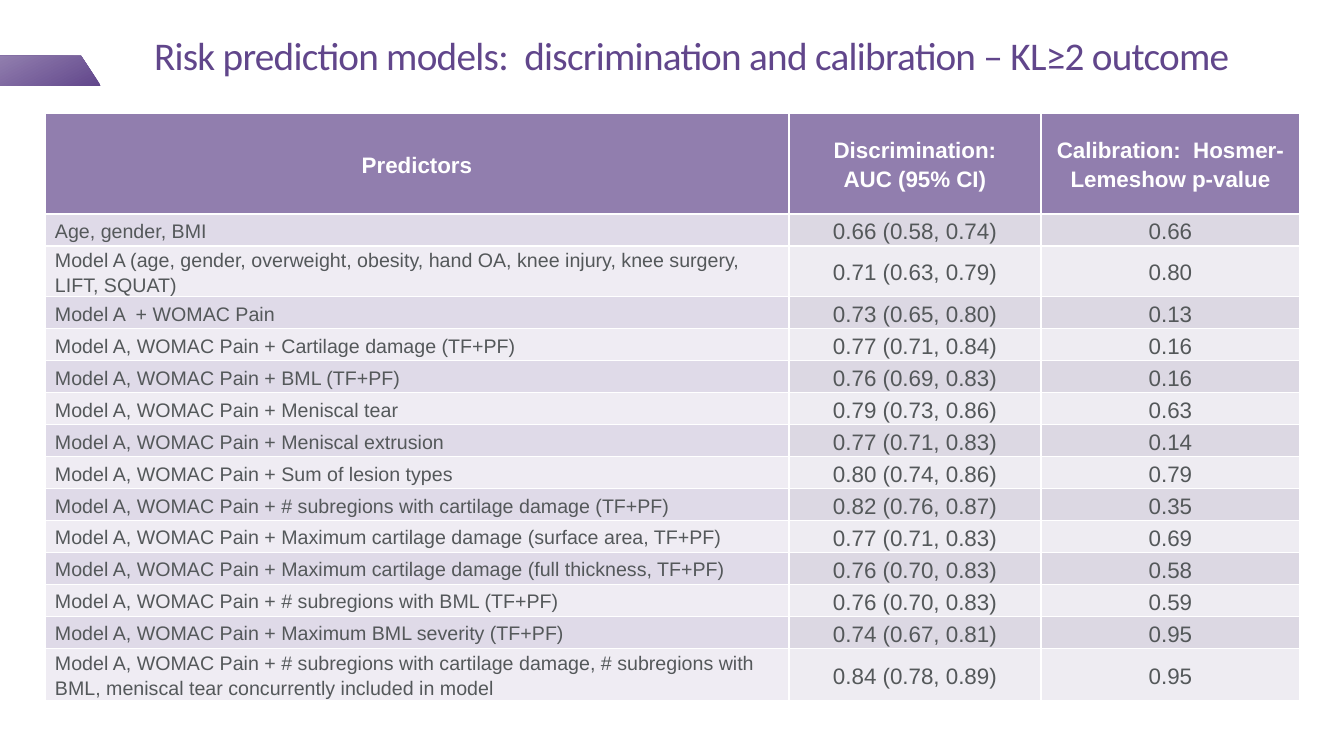
from pptx import Presentation
from pptx.dml.color import RGBColor
from pptx.enum.text import MSO_ANCHOR, MSO_AUTO_SIZE, PP_ALIGN
from pptx.util import Pt

PX = 12192000 / 1344
LEFT, CENTER = PP_ALIGN.LEFT, PP_ALIGN.CENTER
MIDDLE, BOTTOM = MSO_ANCHOR.MIDDLE, MSO_ANCHOR.BOTTOM
NO_FIT = MSO_AUTO_SIZE.NONE
COLORS = {
    "white": "FFFFFF", "dark": "61468B", "purple": "917EAE", "gray": "54585A",
    "odd_name": "DFDAE8", "odd_value": "DCD8E3",
    "even_name": "EFECF3", "even_value": "EEECF2",
}
HEADS = ["Predictors", "Discrimination:\nAUC (95% CI)",
         "Calibration:  Hosmer-Lemeshow p-value"]
BASE = "Model A, WOMAC Pain + "
MODELS = [
    ("Age, gender, BMI", "0.66 (0.58, 0.74)", "0.66"),
    ("Model A (age, gender, overweight, obesity, hand OA, knee injury, "
     "knee surgery, LIFT, SQUAT)", "0.71 (0.63, 0.79)", "0.80"),
    ("Model A  + WOMAC Pain", "0.73 (0.65, 0.80)", "0.13"),
    (BASE + "Cartilage damage (TF+PF)", "0.77 (0.71, 0.84)", "0.16"),
    (BASE + "BML (TF+PF)", "0.76 (0.69, 0.83)", "0.16"),
    (BASE + "Meniscal tear", "0.79 (0.73, 0.86)", "0.63"),
    (BASE + "Meniscal extrusion", "0.77 (0.71, 0.83)", "0.14"),
    (BASE + "Sum of lesion types", "0.80 (0.74, 0.86)", "0.79"),
    (BASE + "# subregions with cartilage damage (TF+PF)", "0.82 (0.76, 0.87)", "0.35"),
    (BASE + "Maximum cartilage damage (surface area, TF+PF)", "0.77 (0.71, 0.83)", "0.69"),
    (BASE + "Maximum cartilage damage (full thickness, TF+PF)", "0.76 (0.70, 0.83)", "0.58"),
    (BASE + "# subregions with BML (TF+PF)", "0.76 (0.70, 0.83)", "0.59"),
    (BASE + "Maximum BML severity (TF+PF)", "0.74 (0.67, 0.81)", "0.95"),
    (BASE + "# subregions with cartilage damage, # subregions with BML, "
     "meniscal tear concurrently included in model", "0.84 (0.78, 0.89)", "0.95"),
]
WIDTHS = [744, 252, 259]
HEIGHTS = [101, 32, 50] + [32] * 11 + [52]


def px(n):
    return round(n * PX)


def write(frame, text, size, color, font="Arial", bold=False, align=CENTER,
          leading=1.15, spacing=0):
    frame.text = text
    for para in frame.paragraphs:
        para.alignment = align
        para.line_spacing = leading
        for run in para.runs:
            run.font.name = font
            run.font.size = Pt(size)
            run.font.bold = bold
            run.font.color.rgb = RGBColor.from_string(COLORS[color])
            if spacing:
                run.font._element.set("spc", str(spacing))


deck = Presentation()
deck.slide_width, deck.slide_height = px(1344), px(756)
slide = deck.slides.add_slide(deck.slide_layouts[5])
shapes = slide.shapes

title = shapes.title
title.left, title.top, title.width, title.height = px(145), 0, px(1134), px(84)
frame = title.text_frame
frame.auto_size = NO_FIT
frame.word_wrap = True
frame.vertical_anchor = BOTTOM
frame.margin_left, frame.margin_top = px(9), 0
frame.margin_right, frame.margin_bottom = px(10), px(5)
write(frame, "Risk prediction models:  discrimination and calibration – KL≥2 outcome",
      28, "dark", font="Calibri", align=LEFT, leading=0.85, spacing=-50)

outline = shapes.build_freeform(0, 56, scale=PX)
outline.add_line_segments([(81, 56), (101, 86), (0, 86)], close=True)
accent = outline.convert_to_shape()
accent.shadow.inherit = False
accent.line.fill.background()
accent.fill.gradient()
accent.fill.gradient_angle = 118
for stop, color, place in zip(accent.fill.gradient_stops, ["dark", "purple"], [0, 1]):
    stop.color.rgb = RGBColor.from_string(COLORS[color])
    stop.position = place

table = shapes.add_table(len(HEIGHTS), len(WIDTHS), px(45), px(113),
                         px(sum(WIDTHS)), px(sum(HEIGHTS))).table
for column, width in zip(table.columns, WIDTHS):
    column.width = px(width)
for row, height in zip(table.rows, HEIGHTS):
    row.height = px(height)

for r, texts in enumerate([HEADS] + MODELS):
    for c, text in enumerate(texts):
        cell = table.cell(r, c)
        cell.vertical_anchor = MIDDLE
        cell.margin_left = cell.margin_right = px(10)
        cell.margin_top = cell.margin_bottom = 0
        band = ("odd" if r % 2 else "even") + ("_value" if c else "_name")
        cell.fill.solid()
        cell.fill.fore_color.rgb = RGBColor.from_string(COLORS[band if r else "purple"])
        name = r > 0 and c == 0
        write(cell.text_frame, text, 14 if name else 16, "gray" if r else "white",
              bold=r == 0, align=LEFT if name else CENTER)

deck.save("out.pptx")
